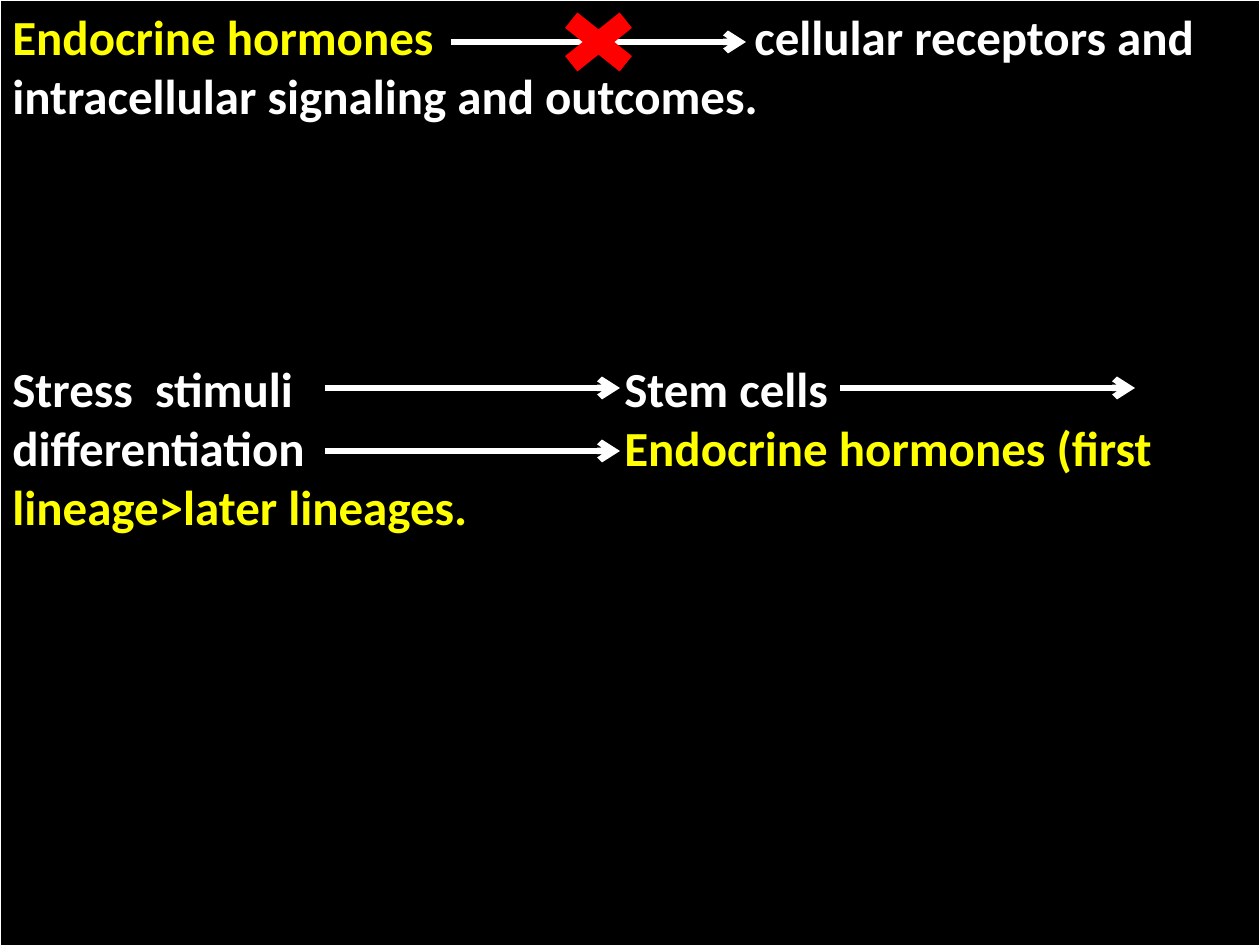
from dataclasses import dataclass

from pptx import Presentation
from pptx.dml.color import RGBColor as RGB
from pptx.enum.shapes import MSO_CONNECTOR as CONN, MSO_SHAPE as SHAPE
from pptx.enum.text import MSO_ANCHOR as ANCHOR, PP_ALIGN as ALIGN
from pptx.oxml.ns import qn
from pptx.util import Emu, Pt
from lxml.etree import SubElement


@dataclass(frozen=True)
class Theme:
    back: RGB = RGB(0, 0, 0)
    text: RGB = RGB(255, 255, 255)
    accent: RGB = RGB(255, 255, 0)
    cross: RGB = RGB(255, 0, 0)
    font: str = "Calibri"
    size: Pt = Pt(28)
    border: Pt = Pt(0.75)
    arrow: Pt = Pt(3.75)


THEME = Theme()
WIDTH, HEIGHT = 1260, 945
ARROW_LENGTH = 295


def px(n):
    return Emu(round(n * 914400 / 126))


def set_attrs(obj, values):
    for name, value in values.items():
        setattr(obj, name, value)


def add_tab_stop(p, pos):
    tabs = SubElement(p._p.get_or_add_pPr(), qn("a:tabLst"))
    SubElement(tabs, qn("a:tab"), pos=str(px(pos)), algn="l")


def add_run(p, text, color):
    r = p.add_run()
    r.text = text
    set_attrs(r.font, {"name": THEME.font, "size": THEME.size, "bold": True})
    r.font.color.rgb = color


def add_break(p):
    p.add_line_break()


def add_arrow(s, x, y):
    c = s.shapes.add_connector(CONN.STRAIGHT, px(x), px(y), px(x + ARROW_LENGTH), px(y))
    c.line.color.rgb = THEME.text
    c.line.width = THEME.arrow
    SubElement(c.line._get_or_add_ln(), qn("a:tailEnd"), type="arrow")
    SubElement(c._element.spPr, qn("a:effectLst"))


def add_statements(s, x, y, w, h):
    sp = s.shapes.add_shape(SHAPE.RECTANGLE, px(x), px(y), px(w), px(h))
    sp.shadow.inherit = False
    sp.fill.background()
    sp.line.color.rgb = THEME.text
    sp.line.width = THEME.border
    tf = sp.text_frame
    set_attrs(tf, {"word_wrap": True, "vertical_anchor": ANCHOR.TOP})

    p = tf.paragraphs[0]
    p.alignment = ALIGN.LEFT
    add_tab_stop(p, 742)
    add_run(p, "Endocrine hormones", THEME.accent)
    add_run(p, "\tcellular receptors and intracellular signaling and outcomes.", THEME.text)

    p = tf.add_paragraph()
    set_attrs(p, {"alignment": ALIGN.LEFT, "space_before": px(235)})
    add_tab_stop(p, 612)
    add_run(p, "Stress  stimuli\tStem cells", THEME.text)
    add_break(p)
    add_run(p, "differentiation\t", THEME.text)
    add_run(p, "Endocrine hormones (first lineage>later lineages.", THEME.accent)


def add_blocked_path(s, x, y):
    add_arrow(s, x, y)
    sp = s.shapes.add_shape(SHAPE.MATH_MULTIPLY, px(x + 95), px(y - 42), px(105), px(84))
    sp.shadow.inherit = False
    sp.fill.solid()
    sp.fill.fore_color.rgb = THEME.cross
    sp.line.fill.background()


def add_stress_path(s, x, y):
    for dx, dy in ((0, 0), (515, 0), (0, 63)):
        add_arrow(s, x + dx, y + dy)


def main():
    prs = Presentation()
    set_attrs(prs, {"slide_width": px(WIDTH), "slide_height": px(HEIGHT)})
    s = prs.slides.add_slide(prs.slide_layouts[6])
    s.background.fill.solid()
    s.background.fill.fore_color.rgb = THEME.back
    add_statements(s, 0, 0, WIDTH, 1201)
    add_blocked_path(s, 451, 42)
    add_stress_path(s, 325, 388)
    prs.save("out.pptx")


if __name__ == "__main__":
    main()
